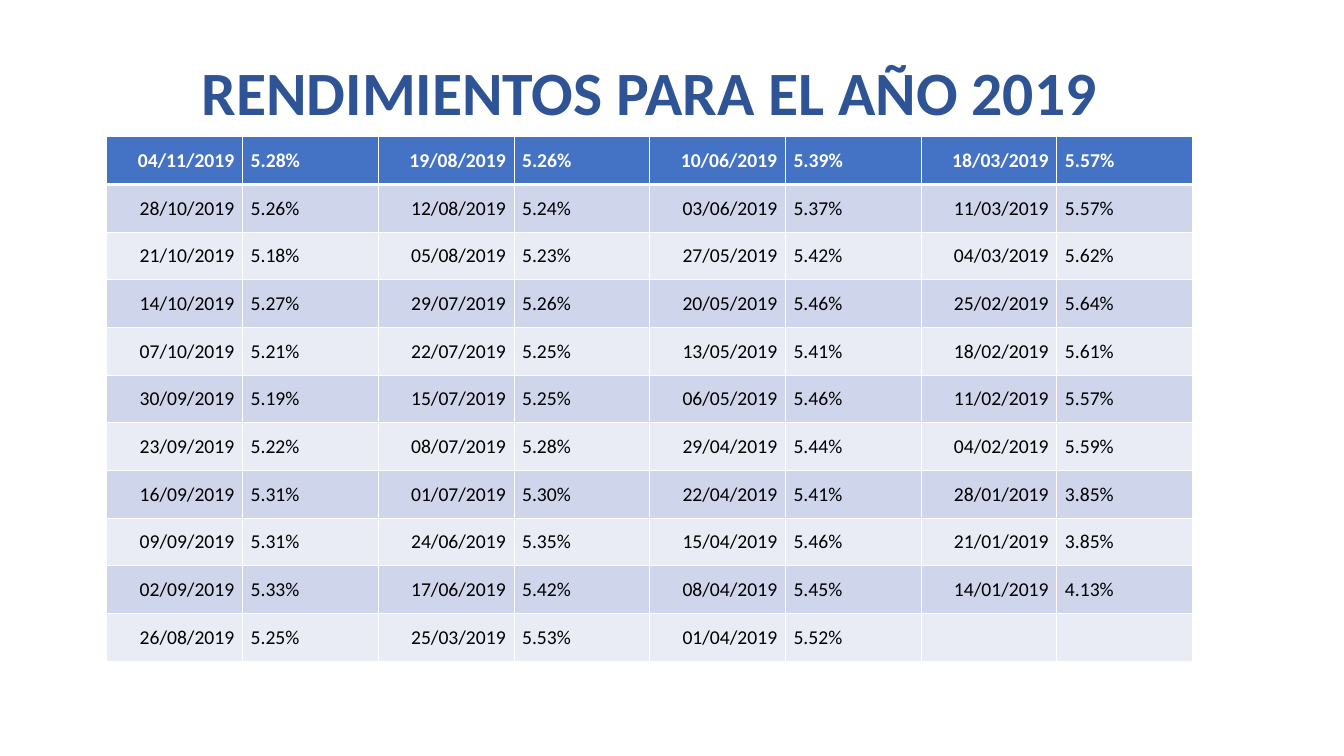
from dataclasses import dataclass

from lxml.etree import SubElement
from pptx import Presentation
from pptx.dml.color import RGBColor
from pptx.enum.text import MSO_ANCHOR as Anchor, MSO_AUTO_SIZE as AutoSize, PP_ALIGN as Align
from pptx.oxml.ns import qn
from pptx.util import Inches, Pt

FONT = "Calibri"
WHITE = "FFFFFF"
SLIDE_WIDTH, SLIDE_HEIGHT = Inches(13.33), Inches(7.5)
LEFT, WIDTH = 0.0795, 0.808
TITLE_TOP, TITLE_HEIGHT = 0.064, 0.112
TABLE_TOP, TABLE_HEIGHT = 0.181, 0.694
THIN, THICK = 0.75, 1.75


@dataclass(frozen=True)
class RowStyle:
    fill: str
    color: str
    bold: bool
    top: float
    bottom: float


HEADER = RowStyle("4472C4", WHITE, True, THIN, THICK)
FIRST = RowStyle("CFD5EA", "000000", False, THICK, THIN)
BANDS = (
    RowStyle("E9EBF5", "000000", False, THIN, THIN),
    RowStyle("CFD5EA", "000000", False, THIN, THIN),
)

YIELDS = """
04/11/2019 5.28% 19/08/2019 5.26% 10/06/2019 5.39% 18/03/2019 5.57%
28/10/2019 5.26% 12/08/2019 5.24% 03/06/2019 5.37% 11/03/2019 5.57%
21/10/2019 5.18% 05/08/2019 5.23% 27/05/2019 5.42% 04/03/2019 5.62%
14/10/2019 5.27% 29/07/2019 5.26% 20/05/2019 5.46% 25/02/2019 5.64%
07/10/2019 5.21% 22/07/2019 5.25% 13/05/2019 5.41% 18/02/2019 5.61%
30/09/2019 5.19% 15/07/2019 5.25% 06/05/2019 5.46% 11/02/2019 5.57%
23/09/2019 5.22% 08/07/2019 5.28% 29/04/2019 5.44% 04/02/2019 5.59%
16/09/2019 5.31% 01/07/2019 5.30% 22/04/2019 5.41% 28/01/2019 3.85%
09/09/2019 5.31% 24/06/2019 5.35% 15/04/2019 5.46% 21/01/2019 3.85%
02/09/2019 5.33% 17/06/2019 5.42% 08/04/2019 5.45% 14/01/2019 4.13%
26/08/2019 5.25% 25/03/2019 5.53% 01/04/2019 5.52%
"""


def rgb(value: str) -> RGBColor:
    return RGBColor.from_string(value)


def across(share: float) -> int:
    return round(SLIDE_WIDTH * share)


def down(share: float) -> int:
    return round(SLIDE_HEIGHT * share)


def format_paragraph(para, size: float, color: str, bold: bool, align) -> None:
    para.alignment = align
    para.font.name = FONT
    para.font.size = Pt(size)
    para.font.bold = bold
    para.font.color.rgb = rgb(color)


def add_title(page, text: str) -> None:
    title = page.shapes.title
    title.left, title.top = across(LEFT), down(TITLE_TOP)
    title.width, title.height = across(WIDTH), down(TITLE_HEIGHT)
    frame = title.text_frame
    frame.text = text
    frame.word_wrap = True
    frame.auto_size = AutoSize.SHAPE_TO_FIT_TEXT
    frame.vertical_anchor = Anchor.TOP
    para = frame.paragraphs[0]
    para.line_spacing = 1.0
    format_paragraph(para, 44, "2F5496", True, Align.CENTER)


def add_borders(cell, style: RowStyle) -> None:
    properties = cell._tc.get_or_add_tcPr()
    widths = {"L": THIN, "R": THIN, "T": style.top, "B": style.bottom}
    for side, width in widths.items():
        line = SubElement(properties, qn(f"a:ln{side}"), w=str(Pt(width)))
        fill = SubElement(line, qn("a:solidFill"))
        SubElement(fill, qn("a:srgbClr"), val=WHITE)


def format_cell(cell, text: str, style: RowStyle, align) -> None:
    cell.margin_left = cell.margin_right = Inches(0.08)
    cell.margin_top = cell.margin_bottom = Inches(0.04)
    cell.vertical_anchor = Anchor.MIDDLE
    add_borders(cell, style)
    cell.fill.solid()
    cell.fill.fore_color.rgb = rgb(style.fill)
    cell.text = text
    format_paragraph(cell.text_frame.paragraphs[0], 14, style.color, style.bold, align)


def add_yield_table(page, rows: list[list[str]]) -> None:
    columns = len(rows[0])
    frame = page.shapes.add_table(
        len(rows), columns, across(LEFT), down(TABLE_TOP), across(WIDTH), down(TABLE_HEIGHT)
    )
    table = frame.table
    for row_index, row in enumerate(rows):
        style = (HEADER, FIRST)[row_index] if row_index < 2 else BANDS[row_index % 2]
        for column in range(columns):
            text = row[column] if column < len(row) else ""
            align = Align.LEFT if column % 2 else Align.RIGHT
            format_cell(table.cell(row_index, column), text, style, align)


def main() -> None:
    deck = Presentation()
    deck.slide_width, deck.slide_height = SLIDE_WIDTH, SLIDE_HEIGHT
    page = deck.slides.add_slide(deck.slide_layouts[5])
    add_yield_table(page, [line.split() for line in YIELDS.strip().splitlines()])
    add_title(page, "RENDIMIENTOS PARA EL AÑO 2019")
    deck.save("out.pptx")


if __name__ == "__main__":
    main()
